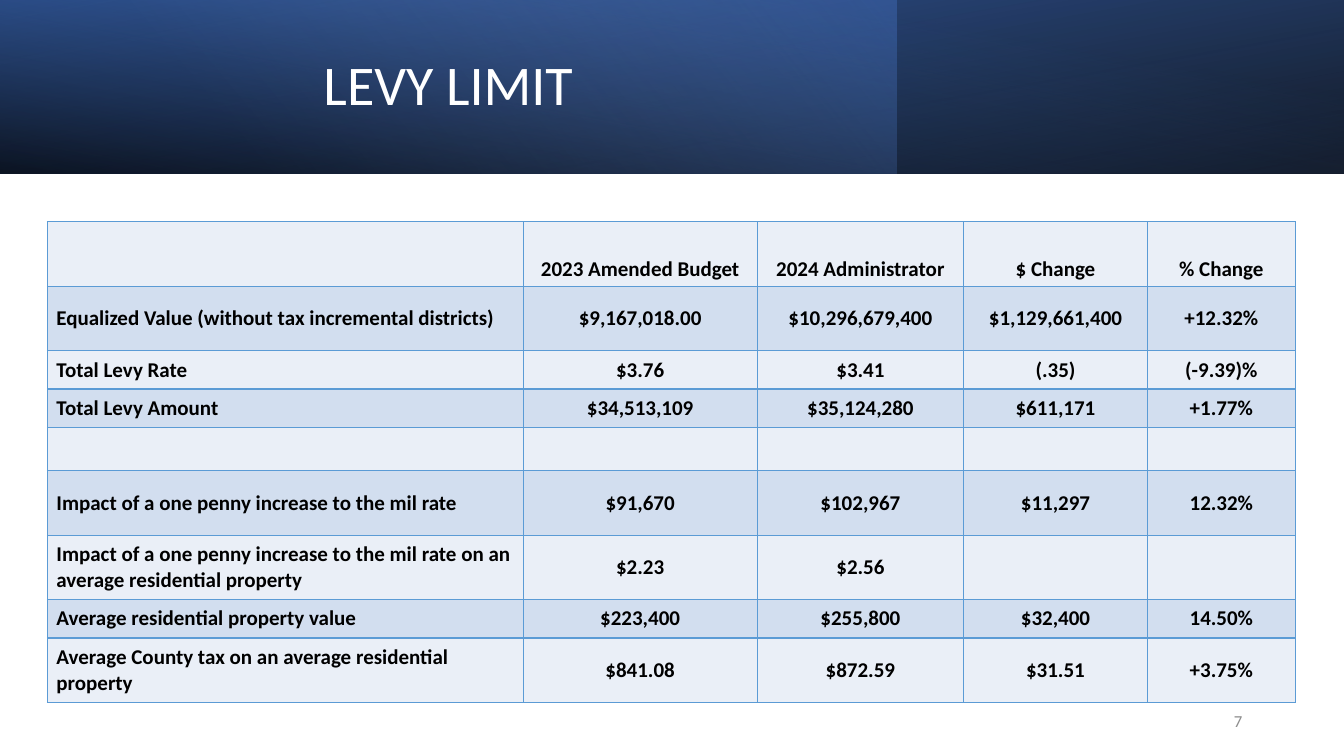
from lxml import etree
from pptx import Presentation
from pptx.dml.color import RGBColor
from pptx.enum.shapes import MSO_SHAPE
from pptx.enum.text import MSO_ANCHOR, PP_ALIGN
from pptx.oxml import parse_xml
from pptx.oxml.ns import nsdecls, qn
from pptx.util import Inches, Pt

WHITE = RGBColor(0xFF, 0xFF, 0xFF)
BLACK = RGBColor(0, 0, 0)
GRAY = RGBColor(0x8C, 0x8C, 0x8C)
NAVY = RGBColor(0x2F, 0x55, 0x97)
BLUE = RGBColor(0x44, 0x72, 0xC4)
LIGHT_BLUE = RGBColor(0x8F, 0xAA, 0xDC)
BORDER = RGBColor(0x5B, 0x9B, 0xD5)
BANDS = (RGBColor(0xEA, 0xEF, 0xF7), RGBColor(0xD2, 0xDE, 0xEF))
FONT = "Calibri"

TITLE = "LEVY LIMIT"
PAGE = "7"
BANNER_HEIGHT = 1.72
# width, rotation, flipped, gradient angle, stops (position %, colour, opacity %)
BANNER = [
    (13.33, 180, True, 100, [(0, BLACK, 96), (100, NAVY, 100)]),
    (8.89, 0, False, 140, [(0, BLUE, 41), (74, LIGHT_BLUE, 0)]),
    (13.33, 0, True, 260, [(0, BLACK, 63), (78, BLUE, 15)]),
]
COL_WIDTHS = [4.72, 2.32, 2.05, 1.82, 1.47]
# row height, cells
ROWS = [
    (0.64, ["", "2023 Amended Budget", "2024 Administrator", "$ Change", "% Change"]),
    (0.64, ["Equalized Value (without tax incremental districts)",
            "$9,167,018.00", "$10,296,679,400", "$1,129,661,400", "+12.32%"]),
    (0.38, ["Total Levy Rate", "$3.76", "$3.41", "(.35)", "(-9.39)%"]),
    (0.38, ["Total Levy Amount", "$34,513,109", "$35,124,280", "$611,171", "+1.77%"]),
    (0.43, ["", "", "", "", ""]),
    (0.64, ["Impact of a one penny increase to the mil rate",
            "$91,670", "$102,967", "$11,297", "12.32%"]),
    (0.64, ["Impact of a one penny increase to the mil rate on an average residential property",
            "$2.23", "$2.56", "", ""]),
    (0.38, ["Average residential property value",
            "$223,400", "$255,800", "$32,400", "14.50%"]),
    (0.64, ["Average County tax on an average residential property",
            "$841.08", "$872.59", "$31.51", "+3.75%"]),
]


def set_text(tf, text, size, color, align, bold=False):
    tf.text = text
    p = tf.paragraphs[0]
    p.alignment = align
    for r in p.runs:
        r.font.name, r.font.size, r.font.bold = FONT, Pt(size), bold
        r.font.color.rgb = color


def add_banner_layer(shapes, width, rotation, flipped, angle, stops):
    sp = shapes.add_shape(MSO_SHAPE.RECTANGLE, 0, 0, Inches(width), Inches(BANNER_HEIGHT))
    sp.shadow.inherit = False
    sp.line.fill.background()
    sp.rotation = rotation
    props = sp._element.spPr
    if flipped:
        props.find(qn("a:xfrm")).set("flipH", "1")
    gs = "".join(
        f'<a:gs pos="{pos * 1000}"><a:srgbClr val="{color}">'
        f'<a:alpha val="{opacity * 1000}"/></a:srgbClr></a:gs>'
        for pos, color, opacity in stops)
    props.find(qn("a:prstGeom")).addnext(parse_xml(
        f'<a:gradFill {nsdecls("a")} rotWithShape="1"><a:gsLst>{gs}</a:gsLst>'
        f'<a:lin ang="{angle * 60000}" scaled="0"/></a:gradFill>'))


def add_borders(cell):
    props = cell._tc.get_or_add_tcPr()
    for i, side in enumerate(("lnL", "lnR", "lnT", "lnB")):
        ln = etree.Element(qn(f"a:{side}"), w=str(Pt(1)))
        fill = etree.SubElement(ln, qn("a:solidFill"))
        etree.SubElement(fill, qn("a:srgbClr"), val=str(BORDER))
        props.insert(i, ln)


def add_levy_table(shapes):
    heights = [height for height, _ in ROWS]
    table = shapes.add_table(
        len(ROWS), len(COL_WIDTHS), Inches(0.47), Inches(2.2),
        Inches(sum(COL_WIDTHS)), Inches(sum(heights))).table
    for col, width in zip(table.columns, COL_WIDTHS):
        col.width = Inches(width)
    for i, (height, texts) in enumerate(ROWS):
        table.rows[i].height = Inches(height)
        for j, text in enumerate(texts):
            cell = table.cell(i, j)
            cell.margin_left = cell.margin_right = Inches(0.09)
            cell.margin_top = cell.margin_bottom = Inches(0.04)
            cell.vertical_anchor = MSO_ANCHOR.MIDDLE if i else MSO_ANCHOR.BOTTOM
            cell.fill.solid()
            cell.fill.fore_color.rgb = BANDS[i % 2]
            set_text(cell.text_frame, text, 15, BLACK,
                     PP_ALIGN.CENTER if j else PP_ALIGN.LEFT, bold=True)
            add_borders(cell)


def main():
    prs = Presentation()
    prs.slide_width, prs.slide_height = Inches(13.33), Inches(7.5)
    slide = prs.slides.add_slide(prs.slide_layouts[5])
    shapes = slide.shapes

    title = shapes.title
    for layer in BANNER:
        add_banner_layer(shapes, *layer)
    shapes._spTree.append(title._element)  # bring the title above the banner
    title.left, title.top = Inches(1.91), Inches(0.23)
    title.width, title.height = Inches(5.07), Inches(1.27)
    title.text_frame.vertical_anchor = MSO_ANCHOR.MIDDLE
    set_text(title.text_frame, TITLE, 40, WHITE, PP_ALIGN.CENTER)
    title.text_frame.paragraphs[0].line_spacing = 0.9

    add_levy_table(shapes)

    number = shapes.add_textbox(Inches(9.42), Inches(6.95), Inches(3), Inches(0.4))
    number.text_frame.word_wrap = True
    number.text_frame.vertical_anchor = MSO_ANCHOR.MIDDLE
    set_text(number.text_frame, PAGE, 12, GRAY, PP_ALIGN.RIGHT)

    prs.save("out.pptx")


if __name__ == "__main__":
    main()
